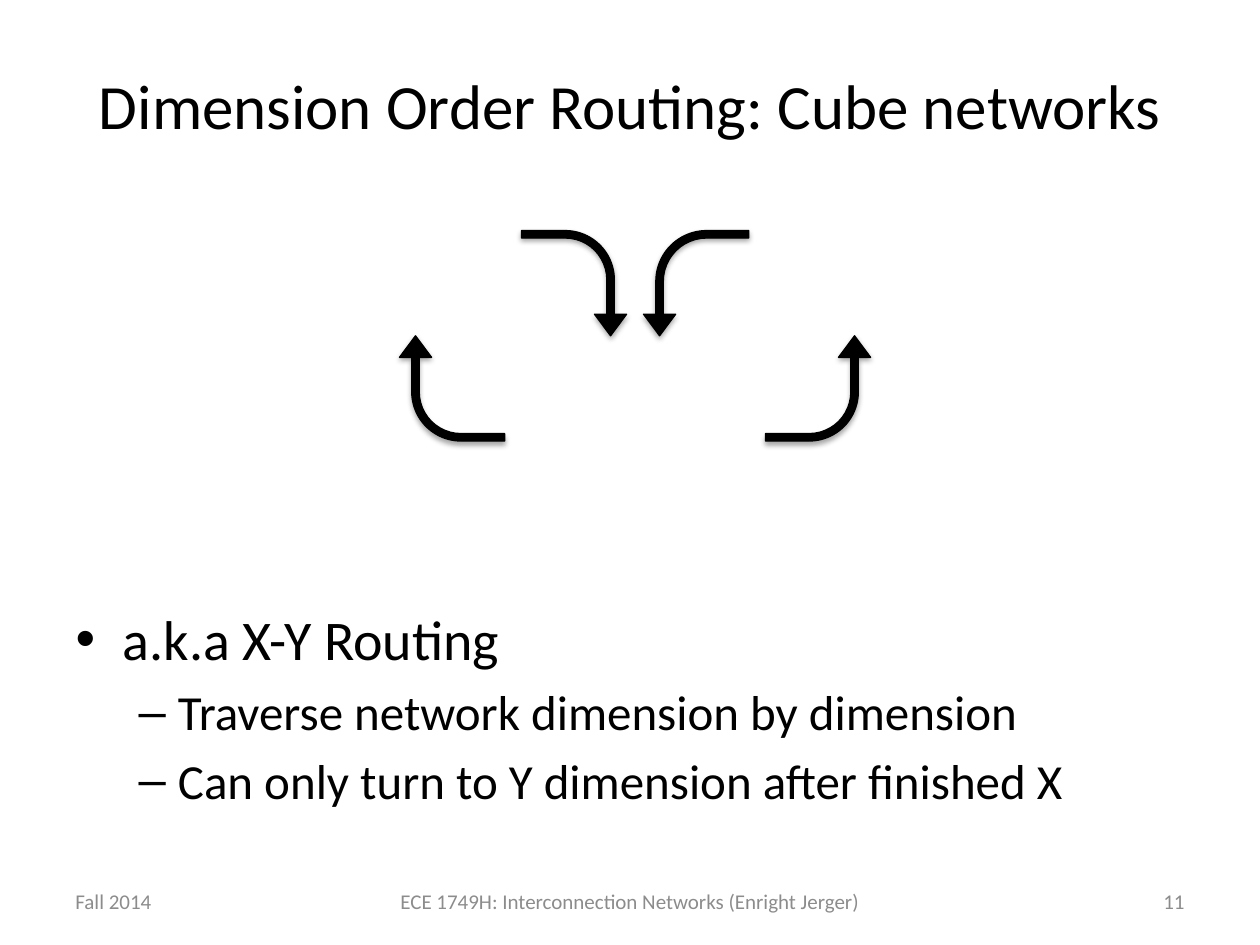
from lxml.etree import SubElement
from pptx import Presentation
from pptx.dml.color import RGBColor
from pptx.enum.shapes import MSO_SHAPE
from pptx.enum.text import MSO_ANCHOR, PP_ALIGN
from pptx.oxml.ns import qn
from pptx.util import Inches, Pt

BLACK = RGBColor(0x00, 0x00, 0x00)
GRAY = RGBColor(0x8C, 0x8C, 0x8C)
FONT = "Calibri"


def place(shape, left, top, width, height):
    shape.left, shape.top = Inches(left), Inches(top)
    shape.width, shape.height = Inches(width), Inches(height)


def style(paragraph, size, color):
    paragraph.font.name = FONT
    paragraph.font.size = Pt(size)
    paragraph.font.color.rgb = color


def add_title(slide, text, left, top, width, height):
    title = slide.shapes.title
    place(title, left, top, width, height)
    title.text_frame.text = text
    title.text_frame.vertical_anchor = MSO_ANCHOR.MIDDLE
    paragraph = title.text_frame.paragraphs[0]
    paragraph.alignment = PP_ALIGN.CENTER
    style(paragraph, 36, BLACK)


def add_body(slide, items, left, top, width, height):
    """Fill the body placeholder; its levels bring bullets and indents."""
    body = slide.placeholders[1]
    place(body, left, top, width, height)
    frame = body.text_frame
    for index, (level, text) in enumerate(items):
        paragraph = frame.add_paragraph() if index else frame.paragraphs[0]
        paragraph.text = text
        paragraph.level = level
        style(paragraph, 28 if level else 32, BLACK)


def add_soft_shadow(shape):
    shape.shadow.inherit = False
    effects = shape._element.spPr.find(qn("a:effectLst"))
    shadow = SubElement(effects, qn("a:outerShdw"), blurRad=str(Pt(3.1)),
                        dist=str(Pt(1.8)), dir="5400000", rotWithShape="0")
    color = SubElement(shadow, qn("a:srgbClr"), val=str(BLACK))
    SubElement(color, qn("a:alpha"), val="35000")


def add_turn(slide, left, top, size, rotation, mirrored, bend):
    turn = slide.shapes.add_shape(MSO_SHAPE.BENT_ARROW, Inches(left), Inches(top),
                                  Inches(size), Inches(size))
    for index, value in enumerate((0.071, 0.153, 0.205, bend)):
        turn.adjustments[index] = value
    turn.rotation = rotation
    if mirrored:
        turn._element.spPr.find(qn("a:xfrm")).set("flipH", "1")
    turn.fill.solid()
    turn.fill.fore_color.rgb = BLACK
    turn.line.color.rgb = BLACK
    turn.line.width = Pt(0.75)
    add_soft_shadow(turn)


def add_turn_diagram(slide, left, top, width, height):
    """Draw the four allowed turns: outer ones go up, inner ones go down."""
    size = height / 2
    step = (width - size) / 3
    turns = [  # row, rotation, mirrored, bend
        (1, 270, False, 0.467),
        (0, 90, False, 0.467),
        (0, 270, True, 0.483),
        (1, 90, True, 0.467),
    ]
    for column, (row, rotation, mirrored, bend) in enumerate(turns):
        add_turn(slide, left + column * step, top + row * size, size,
                 rotation, mirrored, bend)


def add_footer(slide, left, top, width, height):
    side = 2.33
    parts = [
        ("Fall 2014", left, side, PP_ALIGN.LEFT),
        ("ECE 1749H: Interconnection Networks (Enright Jerger)",
         left + side, width - 2 * side, PP_ALIGN.CENTER),
        ("11", left + width - side, side, PP_ALIGN.RIGHT),
    ]
    for text, part_left, part_width, alignment in parts:
        box = slide.shapes.add_textbox(Inches(part_left), Inches(top),
                                       Inches(part_width), Inches(height))
        frame = box.text_frame
        frame.word_wrap = True
        frame.vertical_anchor = MSO_ANCHOR.MIDDLE
        frame.text = text
        frame.paragraphs[0].alignment = alignment
        style(frame.paragraphs[0], 12, GRAY)


def main():
    presentation = Presentation()
    presentation.slide_width = Inches(10)
    presentation.slide_height = Inches(7.5)
    slide = presentation.slides.add_slide(presentation.slide_layouts[1])

    add_title(slide, "Dimension Order Routing: Cube networks", 0.5, 0.3, 9, 1.05)
    add_body(slide, [
        (0, "a.k.a X-Y Routing"),
        (1, "Traverse network dimension by dimension"),
        (1, "Can only turn to Y dimension after finished X"),
    ], 0.5, 4.75, 9, 1.95)
    add_turn_diagram(slide, 3.17, 1.83, 3.74, 1.67)
    add_footer(slide, 0.5, 6.95, 9, 0.4)

    presentation.save("out.pptx")


if __name__ == "__main__":
    main()
